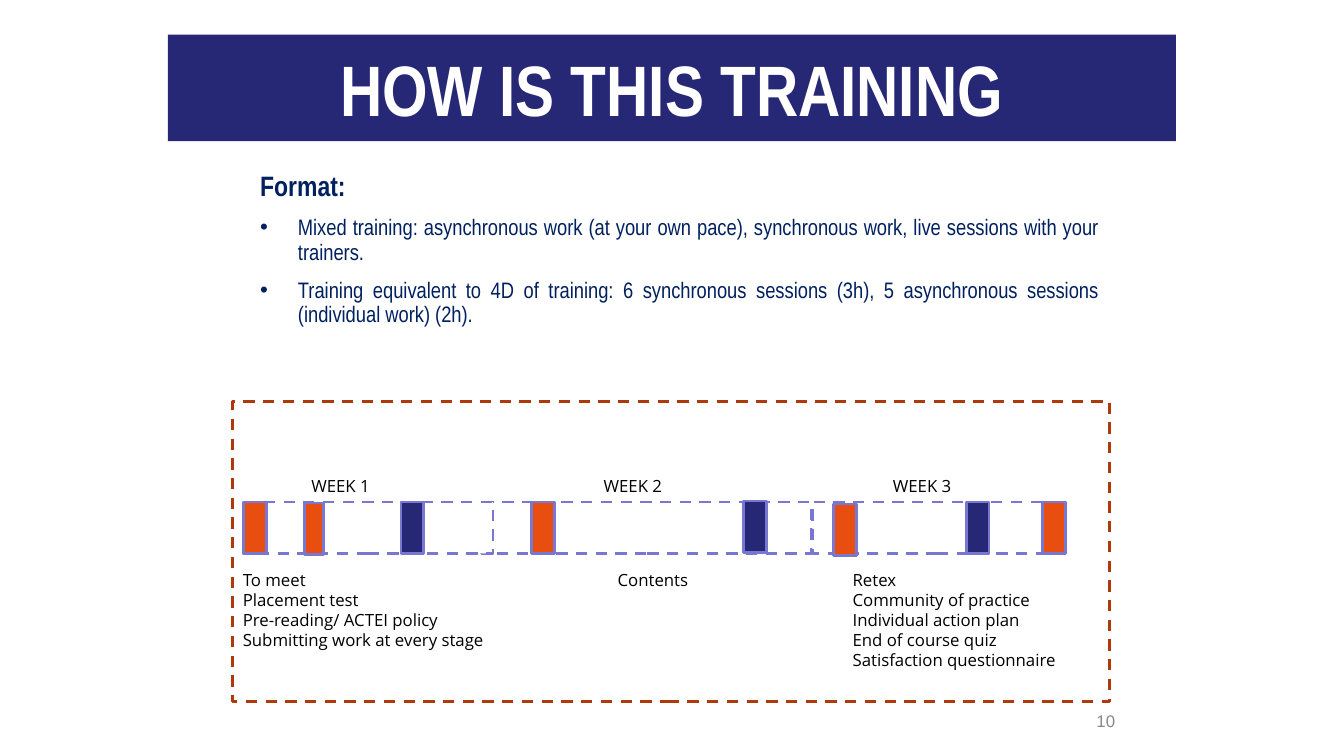
from pptx import Presentation
from pptx.dml.color import RGBColor
from pptx.enum import dml, shapes, text
from pptx.oxml import ns
from pptx.util import Pt
from lxml import etree

NAVY, INK, ORANGE = "262775", "002060", "E84E0F"
LILAC, RUST, WHITE, BLACK, GREY = "7878D3", "AE3A0B", "FFFFFF", "000000", "888888"
ALIGN = text.PP_ALIGN


def rgb(value):
    return RGBColor.from_string(value)


def place(sp, box):
    sp.left, sp.top, sp.width, sp.height = (Pt(v) for v in box)


def add_run(p, words, size, font, color, bold=False):
    r = p.add_run()
    r.text = words
    r.font.size, r.font.name, r.font.bold = Pt(size), font, bold
    r.font.color.rgb = rgb(color)


def add_label(s, box, lines, size=12, font="Open Sans", color=BLACK, align=ALIGN.LEFT,
              anchor=text.MSO_ANCHOR.TOP):
    tf = s.shapes.add_textbox(*(Pt(v) for v in box)).text_frame
    tf.word_wrap, tf.vertical_anchor = True, anchor
    for i, line in enumerate(lines):
        p = tf.add_paragraph() if i else tf.paragraphs[0]
        p.alignment = align
        add_run(p, line, size, font, color)


def add_box(s, box, line, fill=None, dashed=False):
    sp = s.shapes.add_shape(shapes.MSO_SHAPE.RECTANGLE, *(Pt(v) for v in box))
    sp.shadow.inherit = False
    if fill:
        sp.fill.solid()
        sp.fill.fore_color.rgb = rgb(fill)
    else:
        sp.fill.background()
    sp.line.color.rgb, sp.line.width = rgb(line), Pt(2)
    if dashed:
        sp.line.dash_style = dml.MSO_LINE.DASH


def set_bullet(p, indent, char=None):
    pPr = p._p.get_or_add_pPr()
    pPr.set("marL", str(Pt(indent)))
    pPr.set("indent", str(-Pt(indent)))
    if not char:
        etree.SubElement(pPr, ns.qn("a:buNone"))
        return
    color = etree.SubElement(pPr, ns.qn("a:buClr"))
    etree.SubElement(color, ns.qn("a:srgbClr"), val=INK)
    etree.SubElement(pPr, ns.qn("a:buFont"), typeface="Arial")
    etree.SubElement(pPr, ns.qn("a:buChar"), char=char)


def fill_title(s, box):
    sp = s.shapes.title
    place(sp, box)
    sp.fill.solid()
    sp.fill.fore_color.rgb = rgb(NAVY)
    tf = sp.text_frame
    tf.word_wrap, tf.auto_size = True, text.MSO_AUTO_SIZE.NONE
    tf.vertical_anchor = text.MSO_ANCHOR.TOP
    tf.margin_top = tf.margin_bottom = Pt(7.2)
    p = tf.paragraphs[0]
    p.alignment = ALIGN.CENTER
    add_run(p, "HOW IS THIS TRAINING", 51, "Arial Narrow", WHITE, True)


def fill_format(s, box):
    sp = s.placeholders[1]
    place(sp, box)
    tf = sp.text_frame
    tf.word_wrap, tf.auto_size = True, text.MSO_AUTO_SIZE.NONE
    items = [
        "Format:",
        "Mixed training: asynchronous work (at your own pace), synchronous work, "
        "live sessions with your trainers.",
        "Training equivalent to 4D of training: 6 synchronous sessions (3h), "
        "5 asynchronous sessions (individual work) (2h).",
    ]
    for i, item in enumerate(items):
        p = tf.add_paragraph() if i else tf.paragraphs[0]
        p.alignment, p.line_spacing = ALIGN.JUSTIFY, 0.9
        p.space_before, p.space_after = Pt(10), Pt(0)
        set_bullet(p, 27 if i else 0, "•" if i else None)
        add_run(p, item, 16 if i else 20, "Arial Narrow", INK, not i)


def draw_timeline(s, box):
    x, y, w, h = box
    bar_y, bar_h = y + 72, 36.7
    add_box(s, box, RUST, dashed=True)

    weeks = [
        ("WEEK 2", 177.8, 235.4, 257.8),
        ("WEEK 1", 7.2, 178.6, 49),
        ("WEEK 3", 414, 178.6, 464.4),
    ]
    for name, dx, width, label_dx in weeks:
        add_box(s, (x + dx, bar_y, width, bar_h), LILAC, WHITE, True)
        add_label(s, (x + label_dx, y + 49.7, 92, 21.8), [name])

    sessions = [
        (7.9, 0, 16, ORANGE), (51.1, 0.7, 13.7, ORANGE), (120.2, 0, 16, NAVY),
        (213.1, 0, 16.6, ORANGE), (365, -0.7, 16, NAVY), (429.1, 1.4, 16.6, ORANGE),
        (524.2, 0, 16, NAVY), (578.2, 0, 16.6, ORANGE),
    ]
    for dx, dy, width, color in sessions:
        add_box(s, (x + dx, bar_y + dy, width, bar_h), LILAC, color)

    notes = [
        (0, 239, ["To meet", "Placement test", "Pre-reading/ ACTEI policy",
                  "Submitting work at every stage"]),
        (267.8, 75, ["Contents"]),
        (435.6, 182, ["Retex", "Community of practice", "Individual action plan",
                      "End of course quiz", "Satisfaction questionnaire"]),
    ]
    for dx, width, lines in notes:
        add_label(s, (x + dx, y + 116.6, width, 7.2 + 14.5 * len(lines)), lines)


def main():
    prs = Presentation()
    prs.slide_width, prs.slide_height = Pt(960), Pt(540)
    s = prs.slides.add_slide(prs.slide_layouts[1])
    fill_title(s, (120, 24.8, 720, 76))
    fill_format(s, (178.6, 119.5, 614, 155))
    draw_timeline(s, (166.3, 286.6, 626.4, 214.6))
    add_label(s, (635.8, 500.4, 167.8, 28.8), ["10"], 12, "Arial", GREY,
              ALIGN.RIGHT, text.MSO_ANCHOR.MIDDLE)
    prs.save("out.pptx")


if __name__ == "__main__":
    main()
